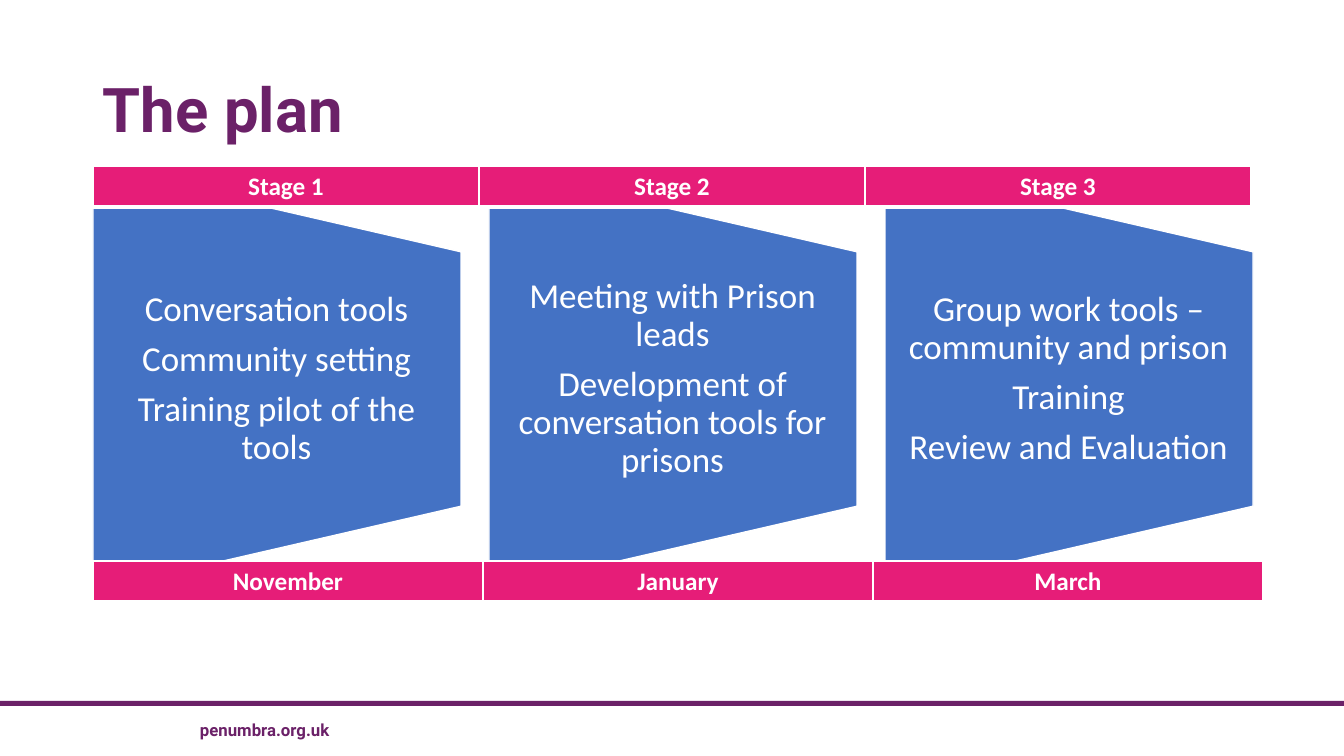
"""Build the slide "The plan": three project stages between two header bands."""
import pptx
import pptx.dml.color
import pptx.enum.shapes
import pptx.enum.text
import pptx.oxml
import pptx.oxml.ns
import pptx.util

TITLE = "The plan"
WEBSITE = "penumbra.org.uk"
STAGES = ["Stage 1", "Stage 2", "Stage 3"]
MONTHS = ["November", "January", "March"]
ACTIVITIES = [
    ["Conversation tools", "Community setting", "Training pilot of the tools"],
    ["Meeting with Prison leads", "Development of conversation tools for prisons"],
    ["Group work tools – community and prison", "Training", "Review and Evaluation"],
]

PURPLE = pptx.dml.color.RGBColor(0x6B, 0x21, 0x68)
PINK = pptx.dml.color.RGBColor(0xE6, 0x1D, 0x78)
BLUE = pptx.dml.color.RGBColor(0x44, 0x72, 0xC4)
WHITE = pptx.dml.color.RGBColor(0xFF, 0xFF, 0xFF)

EMU_PER_PX = 914400 / 100.8
LEFT = 93
PANEL_WIDTH, PANEL_LENGTH, PANEL_PITCH = 368, 424, 396
PANEL_MIDDLE = 379
BODY_HEIGHT = 254
BAND_HEIGHT = 41
BORDERS = {"lnL": 1, "lnR": 1, "lnT": 1, "lnB": 3}


def px(length):
    return pptx.util.Emu(round(length * EMU_PER_PX))


def box(left, top, width, height):
    return px(left), px(top), px(width), px(height)


def style(paragraph, font_name, size, color, bold=False):
    paragraph.font.name = font_name
    paragraph.font.size = pptx.util.Pt(size)
    paragraph.font.color.rgb = color
    paragraph.font.bold = bold


def add_label(slide, area, lines, font_name, size, color, bold, align, anchor, spacing):
    frame = slide.shapes.add_textbox(*box(*area)).text_frame
    frame.word_wrap = True
    frame.vertical_anchor = anchor
    for index, line in enumerate(lines):
        paragraph = frame.add_paragraph() if index else frame.paragraphs[0]
        paragraph.text = line
        paragraph.alignment = align
        paragraph.line_spacing = spacing
        if index:
            paragraph.space_before = pptx.util.Pt(size * 0.35)
        style(paragraph, font_name, size, color, bold)
    return frame


def add_panel(slide, left, activities):
    panel = slide.shapes.add_shape(
        pptx.enum.shapes.MSO_SHAPE.FLOWCHART_MANUAL_OPERATION,
        *box(left + (PANEL_WIDTH - PANEL_LENGTH) / 2, PANEL_MIDDLE - PANEL_WIDTH / 2,
             PANEL_LENGTH, PANEL_WIDTH))
    panel.rotation = 270
    panel.shadow.inherit = False
    panel.fill.solid()
    panel.fill.fore_color.rgb = BLUE
    panel.line.color.rgb = WHITE
    panel.line.width = pptx.util.Pt(1)
    body = add_label(
        slide, (left, PANEL_MIDDLE - BODY_HEIGHT / 2, PANEL_WIDTH, BODY_HEIGHT),
        activities, "Calibri", 25, WHITE, False, pptx.enum.text.PP_ALIGN.CENTER,
        pptx.enum.text.MSO_ANCHOR.MIDDLE, 0.9)
    body.margin_left, body.margin_right = px(17), px(18)
    body.margin_top = body.margin_bottom = 0


def add_borders(cell):
    properties = cell._tc.get_or_add_tcPr()
    for position, (side, points) in enumerate(BORDERS.items()):
        properties.insert(position, pptx.oxml.parse_xml(
            f'<a:{side} {pptx.oxml.ns.nsdecls("a")} w="{pptx.util.Pt(points)}">'
            f'<a:solidFill><a:srgbClr val="{WHITE}"/></a:solidFill></a:{side}>'))


def add_band(slide, top, column_width, headings):
    table = slide.shapes.add_table(
        1, len(headings),
        *box(LEFT, top, column_width * len(headings), BAND_HEIGHT)).table
    for column, heading in enumerate(headings):
        cell = table.cell(0, column)
        cell.text = heading
        cell.fill.solid()
        cell.fill.fore_color.rgb = PINK
        add_borders(cell)
        paragraph = cell.text_frame.paragraphs[0]
        paragraph.alignment = pptx.enum.text.PP_ALIGN.CENTER
        style(paragraph, "Calibri", 18, WHITE, True)


def main():
    presentation = pptx.Presentation()
    presentation.slide_width, presentation.slide_height = px(1344), px(756)
    slide = presentation.slides.add_slide(presentation.slide_layouts[6])

    footer_rule = slide.shapes.add_shape(
        pptx.enum.shapes.MSO_SHAPE.RECTANGLE, *box(0, 701, 1344, 5))
    footer_rule.shadow.inherit = False
    footer_rule.fill.solid()
    footer_rule.fill.fore_color.rgb = PURPLE
    footer_rule.line.fill.background()

    left_align = pptx.enum.text.PP_ALIGN.LEFT
    add_label(slide, (190, 715, 268, 30), [WEBSITE], "Roboto", 12, PURPLE, True,
              left_align, pptx.enum.text.MSO_ANCHOR.TOP, 1.0)
    add_label(slide, (LEFT, 40, 1159, 146), [TITLE], "Roboto", 44, PURPLE, True,
              left_align, pptx.enum.text.MSO_ANCHOR.MIDDLE, 0.9)

    for index, activities in enumerate(ACTIVITIES):
        add_panel(slide, LEFT + index * PANEL_PITCH, activities)
    add_band(slide, 166, 386, STAGES)
    add_band(slide, 561, 390, MONTHS)

    presentation.save("out.pptx")


if __name__ == "__main__":
    main()
